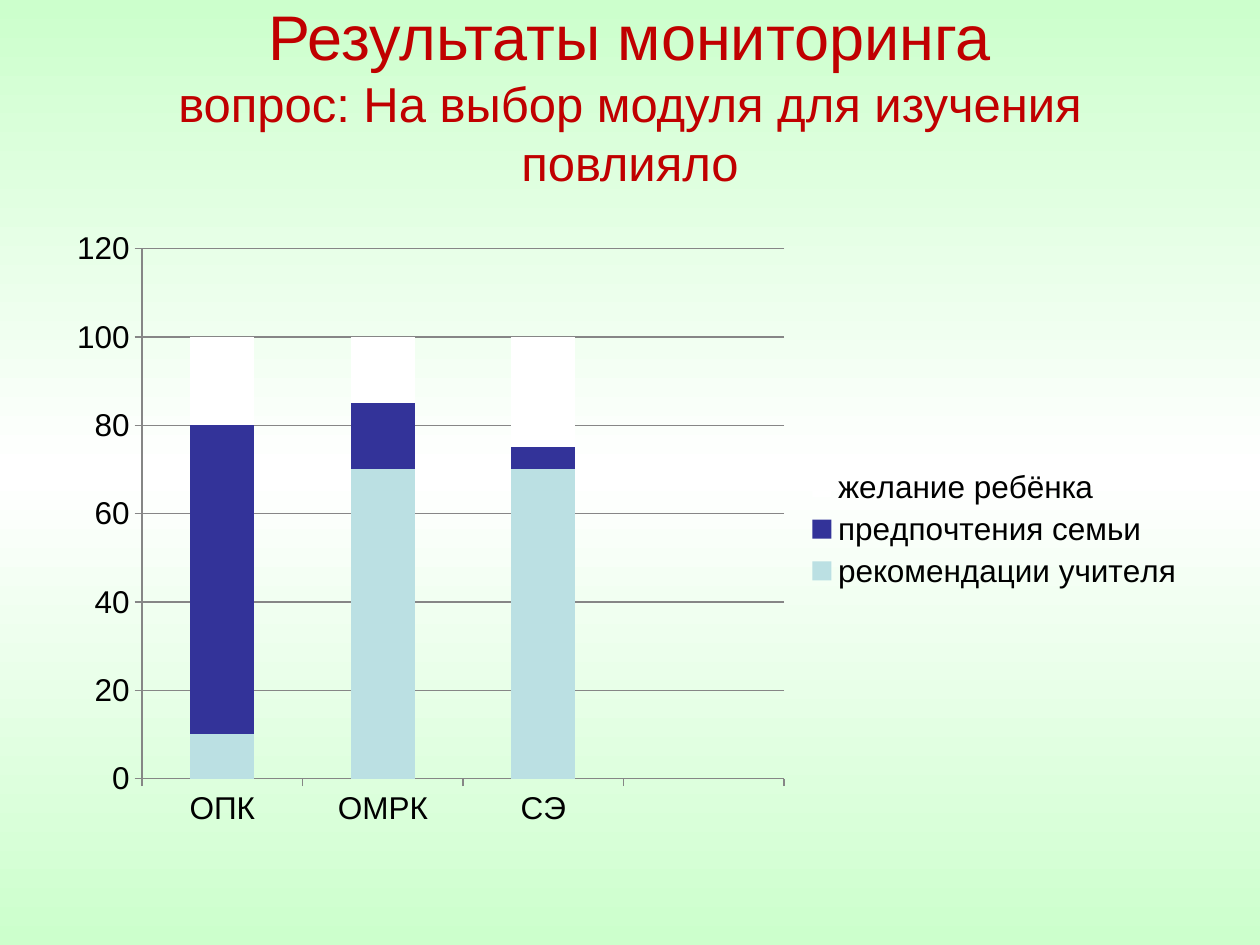
import copy

import pptx
import pptx.chart.data
import pptx.dml.color
import pptx.enum.chart
import pptx.enum.text
import pptx.oxml
import pptx.oxml.ns
import pptx.util

HUES = {
    "mint": "CCFFCC", "white": "FFFFFF", "red": "C00000", "black": "000000",
    "aqua": "BBE0E3", "navy": "333399", "grey": "868686",
}
CATS = ["ОПК", "ОМРК", "СЭ", ""]
ROWS = [
    ("рекомендации учителя", "aqua", (10, 70, 70, None)),
    ("предпочтения семьи", "navy", (70, 15, 5, None)),
    ("желание ребёнка", "white", (20, 15, 25, None)),
]
TITLE = [
    ("Результаты мониторинга", 36),
    ("вопрос: На выбор модуля для изучения повлияло", 28),
]


def hue(name):
    return pptx.dml.color.RGBColor.from_string(HUES[name])


def apply(item, **values):
    for key, value in values.items():
        setattr(item, key, value)


class Deck:
    face = "Arial"

    def __init__(self, wide, high):
        self.file = pptx.Presentation()
        apply(self.file, slide_width=pptx.util.Inches(wide),
              slide_height=pptx.util.Inches(high))
        self.slide = self.file.slides.add_slide(self.file.slide_layouts[6])

    def box(self, left, top, wide, high):
        across, down = self.file.slide_width, self.file.slide_height
        return (int(left * across), int(top * down),
                int(wide * across), int(high * down))

    def font(self, font, size, color):
        apply(font, name=self.face, size=pptx.util.Pt(size))
        font.color.rgb = hue(color)

    def back(self, names):
        fill = self.slide.background.fill
        fill.gradient()
        fill.gradient_angle = 270
        first = fill.gradient_stops[0]._gs
        last = fill.gradient_stops[1]._gs
        last.addprevious(copy.deepcopy(first))
        stops = fill.gradient_stops
        for step, (stop, name) in enumerate(zip(stops, names)):
            stop.position = step / (len(names) - 1)
            stop.color.rgb = hue(name)

    def title(self, lines, color, *area):
        frame = self.slide.shapes.add_textbox(*self.box(*area)).text_frame
        apply(frame, word_wrap=True,
              vertical_anchor=pptx.enum.text.MSO_ANCHOR.MIDDLE)
        para = frame.paragraphs[0]
        para.alignment = pptx.enum.text.PP_ALIGN.CENTER
        for row, (words, size) in enumerate(lines):
            if row:
                para.add_line_break()
            run = para.add_run()
            run.text = words
            self.font(run.font, size, color)

    def chart(self, cats, rows, plot, *area):
        data = pptx.chart.data.CategoryChartData()
        data.categories = cats
        for name, _, vals in rows:
            data.add_series(name, vals)
        kind = pptx.enum.chart.XL_CHART_TYPE.COLUMN_STACKED
        chart = self.slide.shapes.add_chart(kind, *self.box(*area), data).chart
        self.font(chart.font, 18, "black")
        apply(chart, has_title=False, has_legend=True)
        apply(chart.legend, include_in_layout=False,
              position=pptx.enum.chart.XL_LEGEND_POSITION.RIGHT)
        apply(chart.plots[0], overlap=100, gap_width=150, vary_by_categories=False)
        for series, (_, color, _) in zip(chart.plots[0].series, rows):
            series.format.fill.solid()
            series.format.fill.fore_color.rgb = hue(color)
        apply(chart.value_axis, minimum_scale=0, maximum_scale=120,
              major_unit=20, has_major_gridlines=True)
        for axis in (chart.category_axis, chart.value_axis):
            axis.major_tick_mark = pptx.enum.chart.XL_TICK_MARK.OUTSIDE
            self.line(axis.format.line)
        self.line(chart.value_axis.major_gridlines.format.line)
        self.place(chart, plot)

    def line(self, line):
        line.width = pptx.util.Pt(0.75)
        line.color.rgb = hue("grey")

    def place(self, chart, plot):
        area = chart._chartSpace.chart.plotArea
        for old in area.findall(pptx.oxml.ns.qn("c:layout")):
            area.remove(old)
        parts = '<c:layoutTarget val="inner"/>'
        parts += "".join(f'<c:{key}Mode val="edge"/>' for key in "xy")
        parts += "".join(f'<c:{key} val="{part}"/>' for key, part in zip("xywh", plot))
        area.insert(0, pptx.oxml.parse_xml(
            f'<c:layout {pptx.oxml.ns.nsdecls("c")}>'
            f"<c:manualLayout>{parts}</c:manualLayout></c:layout>"))


def main():
    deck = Deck(10, 7.5)
    deck.back(["mint", "white", "mint"])
    deck.title(TITLE, "red", 0.05, 0.04, 0.9, 0.12)
    deck.chart(CATS, ROWS, (0.08, 0.05, 0.56, 0.85), 0.04, 0.23, 0.91, 0.66)
    deck.file.save("out.pptx")


if __name__ == "__main__":
    main()
